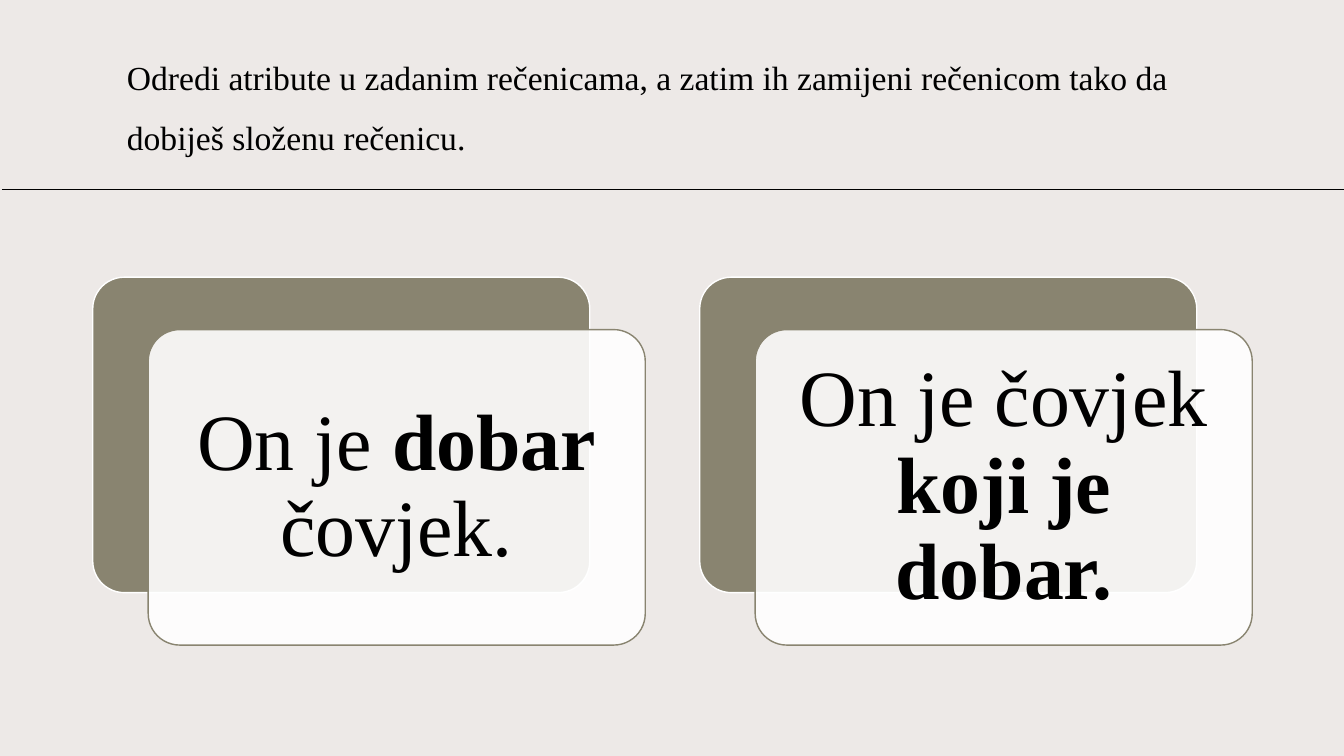
import lxml.etree
import pptx
import pptx.dml.color
import pptx.enum.shapes
import pptx.enum.text
import pptx.oxml.ns
import pptx.util

WIDTH, HEIGHT = 13.33, 7.5
FONT = "Times New Roman"
COLORS = {"background": "EDE9E7", "olive": "898470", "white": "FFFFFF", "ink": "000000"}

CARD_WIDTH, CARD_HEIGHT = 4.93, 3.13
CARD_LEFT, CARD_TOP, CARD_STEP = 0.92, 2.75, 6.02
FRONT_SHIFT_X, FRONT_SHIFT_Y = 0.55, 0.52

SENTENCES = [
    [("On je ", False), ("dobar", True), (" čovjek.", False)],
    [("On je čovjek ", False), ("koji je dobar.", True)],
]


def color(name):
    return pptx.dml.color.RGBColor.from_string(COLORS[name])


def inches(*lengths):
    return [pptx.util.Inches(length) for length in lengths]


def style_font(paragraph, size):
    paragraph.font.name = FONT
    paragraph.font.size = pptx.util.Pt(size)
    paragraph.font.color.rgb = color("ink")


def add_instruction(slide, text):
    box = slide.shapes.add_textbox(*inches(1.16, 0.43, 10.87, 1.18))
    frame = box.text_frame
    frame.word_wrap = True
    frame.vertical_anchor = pptx.enum.text.MSO_ANCHOR.BOTTOM
    paragraph = frame.paragraphs[0]
    paragraph.text = text
    paragraph.line_spacing = 1.5
    style_font(paragraph, 24)


def add_divider(slide, top):
    line = slide.shapes.add_connector(
        pptx.enum.shapes.MSO_CONNECTOR.STRAIGHT, *inches(0.02, top, WIDTH, top))
    line.line.color.rgb = color("ink")
    line.line.width = pptx.util.Pt(0.5)
    lxml.etree.SubElement(line._element.spPr, pptx.oxml.ns.qn("a:effectLst"))


def add_panel(slide, left, top, fill, outline):
    panel = slide.shapes.add_shape(
        pptx.enum.shapes.MSO_SHAPE.ROUNDED_RECTANGLE,
        *inches(left, top, CARD_WIDTH, CARD_HEIGHT))
    panel.adjustments[0] = 0.1
    panel.shadow.inherit = False
    panel.fill.solid()
    panel.fill.fore_color.rgb = color(fill)
    panel.line.color.rgb = color(outline)
    panel.line.width = pptx.util.Pt(1)
    return panel


def set_opacity(shape, percent):
    fill_color = shape._element.spPr.find(
        pptx.oxml.ns.qn("a:solidFill")).find(pptx.oxml.ns.qn("a:srgbClr"))
    alpha = lxml.etree.SubElement(fill_color, pptx.oxml.ns.qn("a:alpha"))
    alpha.set("val", str(percent * 1000))


def write_sentence(shape, runs):
    frame = shape.text_frame
    frame.word_wrap = True
    frame.vertical_anchor = pptx.enum.text.MSO_ANCHOR.MIDDLE
    inset = pptx.util.Inches(0.24)
    frame.margin_left = frame.margin_right = inset
    frame.margin_top = frame.margin_bottom = inset
    paragraph = frame.paragraphs[0]
    paragraph.alignment = pptx.enum.text.PP_ALIGN.CENTER
    paragraph.line_spacing = 0.9
    style_font(paragraph, 57)
    for text, bold in runs:
        run = paragraph.add_run()
        run.text = text
        run.font.bold = bold


def add_card(slide, column, runs):
    left = CARD_LEFT + column * CARD_STEP
    add_panel(slide, left, CARD_TOP, "olive", "white")
    front = add_panel(slide, left + FRONT_SHIFT_X, CARD_TOP + FRONT_SHIFT_Y, "white", "olive")
    set_opacity(front, 90)
    write_sentence(front, runs)


def main():
    presentation = pptx.Presentation()
    presentation.slide_width, presentation.slide_height = inches(WIDTH, HEIGHT)
    slide = presentation.slides.add_slide(presentation.slide_layouts[6])
    slide.background.fill.solid()
    slide.background.fill.fore_color.rgb = color("background")
    add_instruction(slide, "Odredi atribute u zadanim rečenicama, a zatim ih zamijeni "
                           "rečenicom tako da dobiješ složenu rečenicu.")
    add_divider(slide, HEIGHT / 4)
    for column, runs in enumerate(SENTENCES):
        add_card(slide, column, runs)
    presentation.save("out.pptx")


if __name__ == "__main__":
    main()
